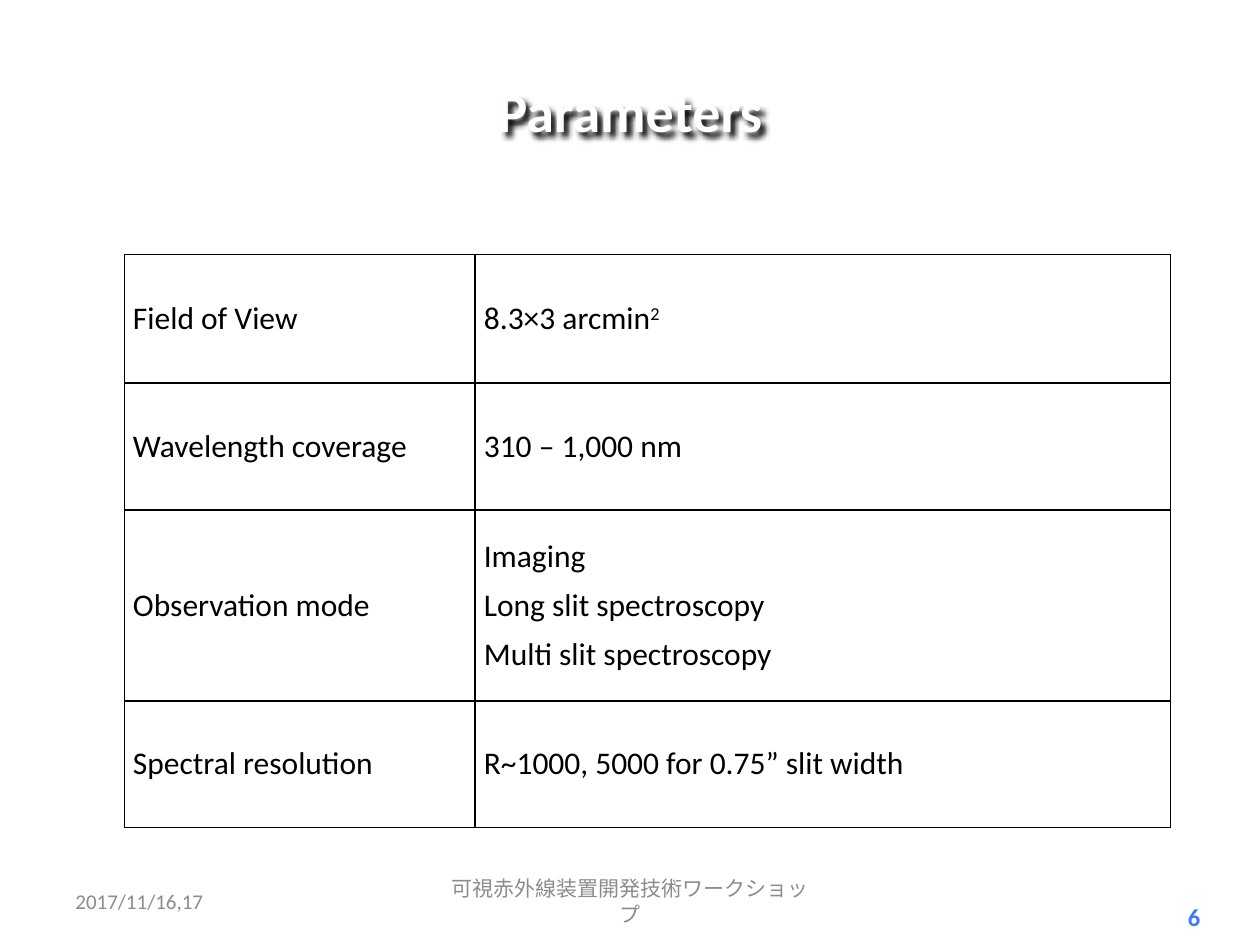
"""Build the instrument parameters slide."""
from lxml.etree import SubElement
from pptx import Presentation
from pptx.dml.color import RGBColor as Color
from pptx.enum.text import MSO_ANCHOR as Anchor, PP_ALIGN as Align
from pptx.oxml import parse_xml
from pptx.oxml.ns import nsdecls, qn
from pptx.util import Pt

COLORS = {
    "text": "000000",
    "title": "FFFFFF",
    "footer": "8C8C8C",
    "number": "3B7CFF",
}
FONT = "Calibri"
COLUMN_WIDTHS = (200.5, 397.5)
ROW_HEIGHTS = (73.5, 72.5, 109, 72.5)
PARAMETERS = (
    ("Field of View", ["8.3×3 arcmin"], "2"),
    ("Wavelength coverage", ["310 – 1,000 nm"], ""),
    (
        "Observation mode",
        ["Imaging", "Long slit spectroscopy", "Multi slit spectroscopy"],
        "",
    ),
    ("Spectral resolution", ["R~1000, 5000 for 0.75” slit width"], ""),
)


def add_text(paragraph, text, size=18, color="text", bold=False, align=None, raised=False):
    """Add a formatted run to a paragraph."""
    if align is not None:
        paragraph.alignment = align
    run = paragraph.add_run()
    run.text = text
    run.font.name = FONT
    run.font.size = Pt(size)
    run.font.bold = bold
    run.font.color.rgb = Color.from_string(COLORS[color])
    if raised:
        run.font._element.set("baseline", "30000")


def add_title(slide, text):
    """Fill the title placeholder with white, shadowed text."""
    title = slide.shapes.title
    title.left, title.top, title.width, title.height = Pt(36), Pt(24), Pt(648), Pt(78)
    title.fill.background()
    title.line.fill.background()
    title.text_frame.vertical_anchor = Anchor.MIDDLE
    paragraph = title.text_frame.paragraphs[0]
    add_text(paragraph, text, size=32, color="title", bold=True, align=Align.CENTER)
    shadow = parse_xml(
        f'<a:effectLst {nsdecls("a")}><a:outerShdw blurRad="{Pt(3)}" dist="{Pt(3)}" '
        f'dir="2700000" algn="tl" rotWithShape="0"><a:srgbClr val="{COLORS["text"]}"/>'
        "</a:outerShdw></a:effectLst>"
    )
    title._element.spPr.append(shadow)


def add_label(slide, text, left, top, width, height, anchor=Anchor.MIDDLE, **text_format):
    """Add a one-paragraph text box."""
    box = slide.shapes.add_textbox(Pt(left), Pt(top), Pt(width), Pt(height))
    box.text_frame.word_wrap = True
    box.text_frame.vertical_anchor = anchor
    add_text(box.text_frame.paragraphs[0], text, **text_format)


def add_borders(cell):
    """Draw a thin line on all four sides of a cell."""
    properties = cell._tc.get_or_add_tcPr()
    for index, side in enumerate(("lnL", "lnR", "lnT", "lnB")):
        line = SubElement(properties, qn(f"a:{side}"), w=str(Pt(1)))
        fill = SubElement(line, qn("a:solidFill"))
        SubElement(fill, qn("a:srgbClr"), val=COLORS["text"])
        properties.insert(index, line)


def fill_cell(cell, lines, exponent=""):
    """Write lines into a bordered cell, with an optional raised ending."""
    cell.fill.background()
    cell.vertical_anchor = Anchor.MIDDLE
    cell.margin_left = cell.margin_right = Pt(5)
    cell.margin_top = cell.margin_bottom = Pt(0)
    add_borders(cell)
    for index, text in enumerate(lines):
        paragraph = cell.text_frame.add_paragraph() if index else cell.text_frame.paragraphs[0]
        if index:
            paragraph.space_before = Pt(6)
        add_text(paragraph, text, align=Align.JUSTIFY)
    if exponent:
        add_text(paragraph, exponent, raised=True)


def add_parameter_table(slide):
    """Add the table of parameter names and values."""
    frame = slide.shapes.add_table(
        len(PARAMETERS), len(COLUMN_WIDTHS),
        Pt(71), Pt(145.5), Pt(sum(COLUMN_WIDTHS)), Pt(sum(ROW_HEIGHTS)),
    )
    table = frame.table
    table.first_row = table.horz_banding = False
    for column, width in zip(table.columns, COLUMN_WIDTHS):
        column.width = Pt(width)
    for row, height, (name, values, exponent) in zip(table.rows, ROW_HEIGHTS, PARAMETERS):
        row.height = Pt(height)
        fill_cell(row.cells[0], [name])
        fill_cell(row.cells[1], values, exponent)


def main():
    """Create and save the presentation."""
    presentation = Presentation()
    presentation.slide_width, presentation.slide_height = Pt(720), Pt(540)
    slide = presentation.slides.add_slide(presentation.slide_layouts[5])
    add_label(slide, "6", 606, 512, 87, 24.5, anchor=Anchor.TOP,
              size=14, color="number", bold=True, align=Align.RIGHT)
    add_title(slide, "Parameters")
    add_parameter_table(slide)
    add_label(slide, "2017/11/16,17", 36, 500.5, 168, 28.8, size=12, color="footer")
    add_label(slide, "可視赤外線装置開発技術ワークショップ", 246, 500.5, 228, 28.8,
              size=12, color="footer", align=Align.CENTER)
    presentation.save("out.pptx")


if __name__ == "__main__":
    main()
